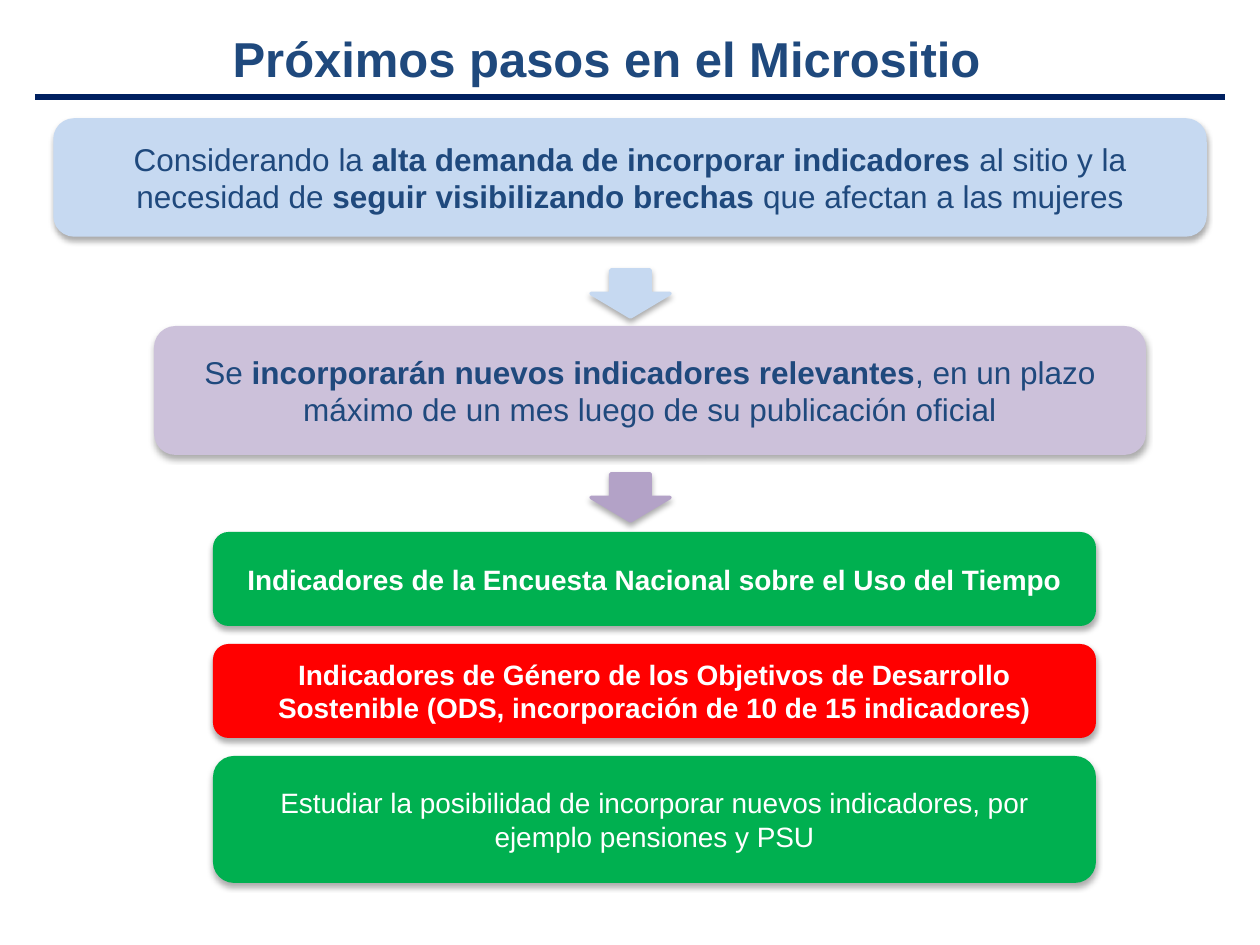
from dataclasses import dataclass

from lxml.etree import SubElement
from pptx import Presentation
from pptx.dml.color import RGBColor
from pptx.enum.shapes import MSO_CONNECTOR, MSO_SHAPE
from pptx.enum.text import MSO_ANCHOR, MSO_AUTO_SIZE, PP_ALIGN
from pptx.oxml.ns import qn
from pptx.util import Emu, Pt


@dataclass(frozen=True)
class Theme:
    font: str = "Arial"
    navy: str = "1F497D"
    rule: str = "002060"
    blue: str = "C6D9F1"
    lilac: str = "CCC1DA"
    purple: str = "B3A2C7"
    green: str = "00B050"
    red: str = "FF0000"
    white: str = "FFFFFF"
    title_size: int = 28
    step_size: int = 18
    item_size: int = 16


THEME = Theme()
PX_PER_INCH = 126
ITEM_GAP = 18


def px(*lengths):
    return [Emu(round(n * 914400 / PX_PER_INCH)) for n in lengths]


def rgb(color):
    return RGBColor.from_string(color)


def write(sp, text, size, color):
    """Fill a shape with centred text; parts between ** marks are bold."""
    tf = sp.text_frame
    tf.word_wrap = True
    tf.vertical_anchor = MSO_ANCHOR.MIDDLE
    p = tf.paragraphs[0]
    p.alignment = PP_ALIGN.CENTER
    for i, part in enumerate(text.split("**")):
        if not part:
            continue
        r = p.add_run()
        r.text = part
        fmt = {"name": THEME.font, "size": Pt(size), "bold": i % 2 == 1}
        for key, value in fmt.items():
            setattr(r.font, key, value)
        r.font.color.rgb = rgb(color)


def add_shadow(sp):
    sp.shadow.inherit = False
    effects = sp._element.spPr.find(qn("a:effectLst"))
    shadow = SubElement(effects, qn("a:outerShdw"), blurRad=str(Pt(3.5)),
                        dist=str(Pt(2.2)), dir="5400000", rotWithShape="0")
    black = SubElement(shadow, qn("a:srgbClr"), val="000000")
    SubElement(black, qn("a:alpha"), val="32000")


def add_block(slide, kind, box, fill, outlined=False):
    sp = slide.shapes.add_shape(kind, *px(*box))
    sp.fill.solid()
    sp.fill.fore_color.rgb = rgb(fill)
    if outlined:
        sp.line.color.rgb = rgb(fill)
        sp.line.width = Pt(2)
    else:
        sp.line.fill.background()
    add_shadow(sp)
    return sp


def add_header(slide, box, text):
    x, y, w, h = box
    title = slide.shapes.title
    title.left, title.top, title.width, title.height = px(x, y, w - 47, h - 4)
    write(title, f"**{text}**", THEME.title_size, THEME.navy)
    title.text_frame.auto_size = MSO_AUTO_SIZE.NONE
    rule = slide.shapes.add_connector(
        MSO_CONNECTOR.STRAIGHT, *px(x, y + h, x + w, y + h))
    rule.line.color.rgb = rgb(THEME.rule)
    rule.line.width = Pt(3)
    SubElement(rule._element.spPr, qn("a:effectLst"))


def add_step(slide, box, text, fill, outlined=False):
    sp = add_block(slide, MSO_SHAPE.ROUNDED_RECTANGLE, box, fill, outlined)
    write(sp, text, THEME.step_size, THEME.navy)


def add_arrow(slide, box, fill):
    add_block(slide, MSO_SHAPE.DOWN_ARROW, box, fill, outlined=True)


def add_items(slide, box, items):
    """Stack (height, fill, text) items from the top of the box."""
    x, y, w, _ = box
    for height, fill, text in items:
        sp = add_block(slide, MSO_SHAPE.ROUNDED_RECTANGLE,
                       (x, y, w, height), fill)
        write(sp, text, THEME.item_size, THEME.white)
        y += height + ITEM_GAP


def main():
    prs = Presentation()
    prs.slide_width, prs.slide_height = px(1260, 945)
    slide = prs.slides.add_slide(prs.slide_layouts[5])

    add_header(slide, (35, 22, 1190, 75), "Próximos pasos en el Micrositio")
    add_step(slide, (55, 120, 1150, 115),
             "Considerando la **alta demanda de incorporar indicadores **"
             "al sitio y la necesidad de **seguir visibilizando brechas **"
             "que afectan a las mujeres", THEME.blue, outlined=True)
    add_arrow(slide, (591, 270, 79, 47), THEME.blue)
    add_step(slide, (154, 326, 992, 129),
             "Se **incorporarán nuevos indicadores relevantes**, en un plazo "
             "máximo de un mes luego de su publicación oficial", THEME.lilac)
    add_arrow(slide, (591, 474, 79, 47), THEME.purple)
    add_items(slide, (213, 532, 883, 351), [
        (94, THEME.green,
         "**Indicadores de la Encuesta Nacional sobre el Uso del Tiempo**"),
        (94, THEME.red,
         "**Indicadores de Género de los Objetivos de Desarrollo Sostenible "
         "(ODS, incorporación de 10 de 15 indicadores)**"),
        (127, THEME.green,
         "Estudiar la posibilidad de incorporar nuevos indicadores, "
         "por ejemplo pensiones y PSU"),
    ])
    prs.save("out.pptx")


if __name__ == "__main__":
    main()
